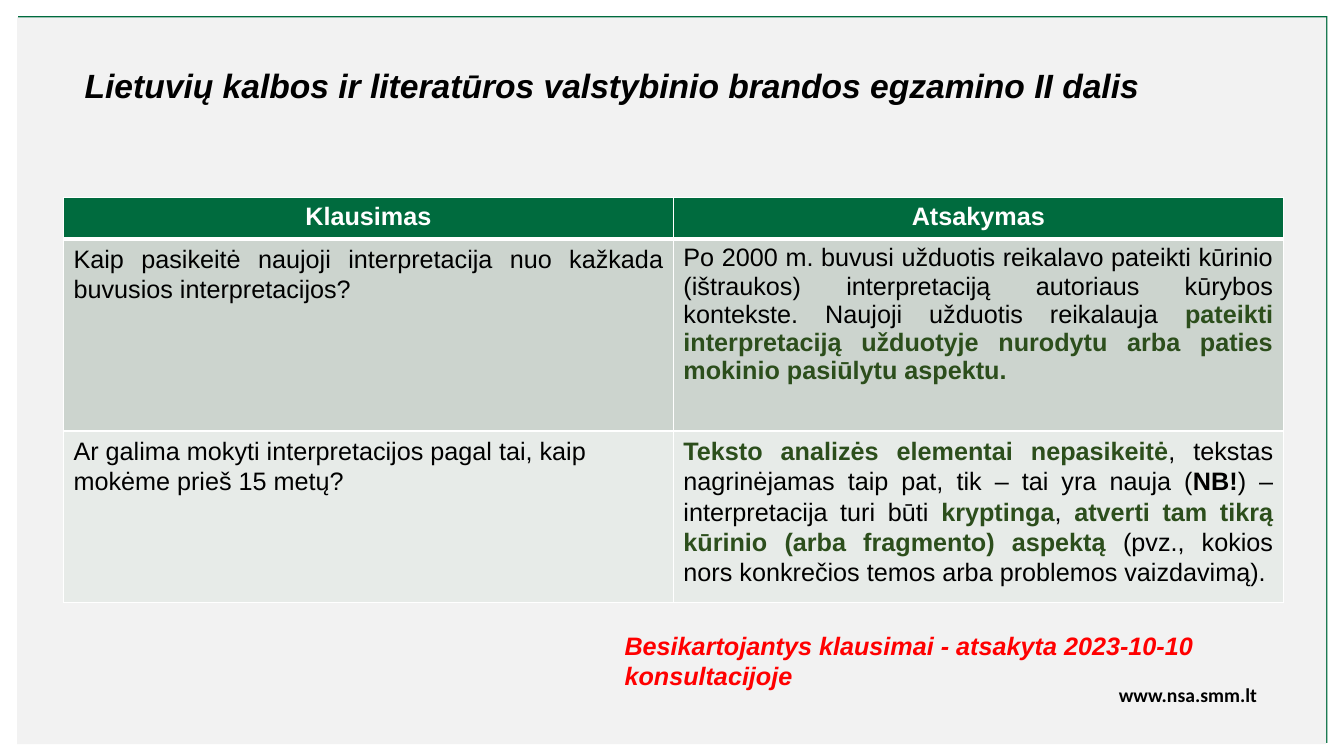
from dataclasses import dataclass

from lxml.etree import SubElement
from pptx import Presentation
from pptx.dml.color import RGBColor
from pptx.enum.shapes import MSO_SHAPE
from pptx.enum.text import MSO_ANCHOR, MSO_AUTO_SIZE, PP_ALIGN
from pptx.oxml.ns import qn
from pptx.slide import Slide
from pptx.table import _Cell as Cell
from pptx.text.text import TextFrame
from pptx.util import Cm, Pt

GREEN = RGBColor(0x00, 0x6B, 0x3E)
DARK_GREEN = RGBColor(0x2C, 0x4E, 0x1C)
PANEL_GREY = RGBColor(0xF2, 0xF2, 0xF2)
BAND_DARK = RGBColor(0xCC, 0xD4, 0xCE)
BAND_LIGHT = RGBColor(0xE7, 0xEB, 0xE8)
WHITE = RGBColor(0xFF, 0xFF, 0xFF)
BLACK = RGBColor(0x00, 0x00, 0x00)
RED = RGBColor(0xFF, 0x00, 0x00)


@dataclass(frozen=True)
class Area:
    """Position and size in centimetres."""
    left: float
    top: float
    width: float
    height: float

    def lengths(self) -> tuple[Cm, Cm, Cm, Cm]:
        return Cm(self.left), Cm(self.top), Cm(self.width), Cm(self.height)


@dataclass(frozen=True)
class Span:
    text: str
    bold: bool = False
    color: RGBColor = BLACK


@dataclass(frozen=True)
class TextStyle:
    size: int = 18
    font: str = "Arial"
    color: RGBColor | None = None
    bold: bool | None = None
    italic: bool | None = None
    align: PP_ALIGN = PP_ALIGN.LEFT
    line_spacing: float = 1.0


@dataclass(frozen=True)
class CellContent:
    spans: tuple[Span, ...]
    style: TextStyle


@dataclass(frozen=True)
class TableRow:
    height: float
    fill: RGBColor
    cells: tuple[CellContent, CellContent]
    top_line: int = 1
    bottom_line: int = 1


def key(text: str) -> Span:
    return Span(text, True, DARK_GREEN)


HEADER = TextStyle(align=PP_ALIGN.CENTER)
LOOSE = TextStyle(line_spacing=1.07)
JUSTIFIED = TextStyle(align=PP_ALIGN.JUSTIFY)
LOOSE_JUSTIFIED = TextStyle(align=PP_ALIGN.JUSTIFY, line_spacing=1.07)

TABLE_AREA = Area(1.6, 4.98, 30.74, 10.2)
ROWS = (
    TableRow(1.04, GREEN, (
        CellContent((Span("Klausimas", True, WHITE),), HEADER),
        CellContent((Span("Atsakymas", True, WHITE),), HEADER),
    ), bottom_line=3),
    TableRow(4.84, BAND_DARK, (
        CellContent((Span("Kaip pasikeitė naujoji interpretacija nuo kažkada "
                          "buvusios interpretacijos?"),), LOOSE_JUSTIFIED),
        CellContent((
            Span("Po 2000 m. buvusi užduotis reikalavo pateikti kūrinio (ištraukos) "
                 "interpretaciją autoriaus kūrybos kontekste. Naujoji užduotis reikalauja "),
            key("pateikti interpretaciją užduotyje nurodytu arba paties mokinio "
                "pasiūlytu aspektu."),
        ), JUSTIFIED),
    ), top_line=3),
    TableRow(4.32, BAND_LIGHT, (
        CellContent((Span("Ar galima mokyti interpretacijos pagal tai, kaip mokėme "
                          "prieš 15 metų?"),), LOOSE),
        CellContent((
            key("Teksto analizės elementai nepasikeitė"),
            Span(", tekstas nagrinėjamas taip pat, tik – tai yra nauja ("),
            Span("NB!", True),
            Span(") – interpretacija turi būti "),
            key("kryptinga"),
            Span(", "),
            key("atverti tam tikrą kūrinio (arba fragmento) aspektą"),
            Span(" (pvz., kokios nors konkrečios temos arba problemos vaizdavimą)."),
        ), LOOSE_JUSTIFIED),
    )),
)


def write(frame: TextFrame, spans: tuple[Span, ...], style: TextStyle) -> None:
    """Fill a frame with one paragraph; spans set colour and weight if the style does not."""
    paragraph = frame.paragraphs[0]
    paragraph.alignment = style.align
    paragraph.line_spacing = style.line_spacing
    font = paragraph.font
    font.name, font.size = style.font, Pt(style.size)
    font.bold, font.italic = style.bold, style.italic
    if style.color is not None:
        font.color.rgb = style.color
    for span in spans:
        run = paragraph.add_run()
        run.text = span.text
        if style.color is None:
            run.font.bold = span.bold
            run.font.color.rgb = span.color


def add_panel(page: Slide, area: Area, color: RGBColor) -> None:
    panel = page.shapes.add_shape(MSO_SHAPE.RECTANGLE, *area.lengths())
    panel.shadow.inherit = False
    panel.fill.solid()
    panel.fill.fore_color.rgb = color
    panel.line.fill.background()


def add_text(page: Slide, area: Area, text: str, style: TextStyle) -> None:
    box = page.shapes.add_textbox(*area.lengths())
    box.text_frame.word_wrap = True
    write(box.text_frame, (Span(text),), style)


def set_title(page: Slide, area: Area, text: str, style: TextStyle) -> None:
    title = page.shapes.title
    title.left, title.top, title.width, title.height = area.lengths()
    frame = title.text_frame
    frame.auto_size = MSO_AUTO_SIZE.NONE
    frame.vertical_anchor = MSO_ANCHOR.TOP
    frame.word_wrap = True
    write(frame, (Span(text),), style)
    # Bring the title in front of the panels
    title.element.getparent().append(title.element)


def set_borders(cell: Cell, top: int, bottom: int) -> None:
    properties = cell._tc.get_or_add_tcPr()
    for side, width in (("L", 1), ("R", 1), ("T", top), ("B", bottom)):
        line = SubElement(properties, qn(f"a:ln{side}"), w=str(Pt(width)))
        fill = SubElement(line, qn("a:solidFill"))
        SubElement(fill, qn("a:srgbClr"), val=str(WHITE))


def add_question_table(page: Slide, area: Area, rows: tuple[TableRow, ...]) -> None:
    columns = len(rows[0].cells)
    table = page.shapes.add_table(len(rows), columns, *area.lengths()).table
    table.horz_banding = False
    for column in table.columns:
        column.width = Cm(area.width / columns)
    for row_index, row in enumerate(rows):
        table.rows[row_index].height = Cm(row.height)
        for column_index, content in enumerate(row.cells):
            cell = table.cell(row_index, column_index)
            set_borders(cell, row.top_line, row.bottom_line)
            cell.fill.solid()
            cell.fill.fore_color.rgb = row.fill
            write(cell.text_frame, content.spans, content.style)


def main() -> None:
    deck = Presentation()
    deck.slide_width, deck.slide_height = Cm(33.87), Cm(19.05)
    page = deck.slides.add_slide(deck.slide_layouts.get_by_name("Title Only"))

    # Grey panel with a thin green edge
    add_panel(page, Area(0.46, 0.41, 32.99, 18.31), GREEN)
    add_panel(page, Area(0.43, 0.44, 32.99, 18.31), PANEL_GREY)

    # Title and site address
    set_title(page, Area(1.88, 1.5, 27.84, 1.27),
              "Lietuvių kalbos ir literatūros valstybinio brandos egzamino II dalis",
              TextStyle(size=24, color=BLACK, bold=True, italic=True))
    add_text(page, Area(23.8, 17.09, 8.13, 0.86), "www.nsa.smm.lt",
             TextStyle(14, "Calibri", BLACK, bold=True, align=PP_ALIGN.RIGHT))

    # Questions and answers
    add_question_table(page, TABLE_AREA, ROWS)

    # Closing remark
    add_text(page, Area(15.49, 15.75, 16.94, 1.8),
             "Besikartojantys klausimai - atsakyta 2023-10-10 konsultacijoje",
             TextStyle(color=RED, bold=True, italic=True))

    deck.save("out.pptx")


if __name__ == "__main__":
    main()
